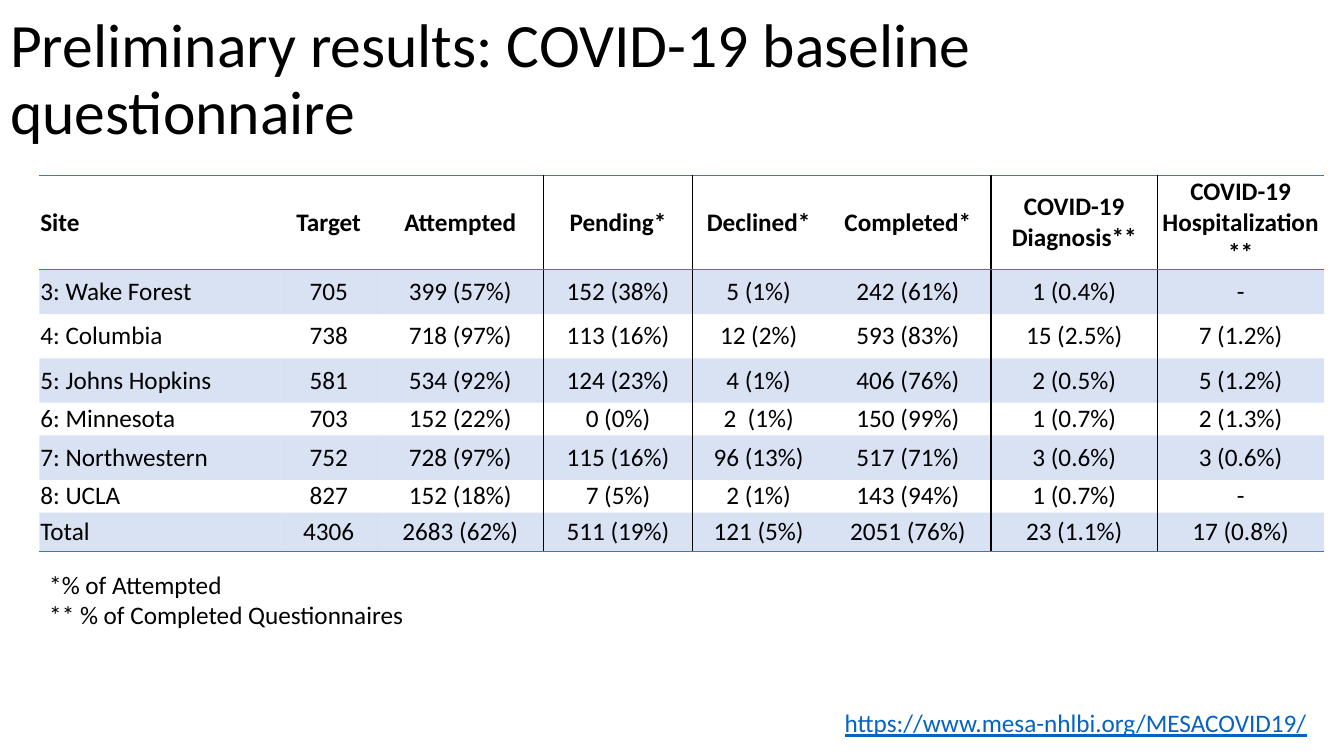
from lxml.etree import SubElement
from pptx import Presentation
from pptx.dml.color import RGBColor
from pptx.enum.text import MSO_ANCHOR, MSO_AUTO_SIZE, PP_ALIGN
from pptx.oxml.ns import qn
from pptx.util import Inches, Pt

BLACK, BLUE, LINK = "000000", "4472C4", "0563C1"
NO_STYLE = "{2D5ABB26-0587-4C30-8999-92F81FD0307C}"

COLUMN_WIDTHS = [2.39, 0.96, 1.65, 1.48, 1.31, 1.65, 1.65, 1.65]
ROW_HEIGHTS = [0.85, 0.44, 0.44, 0.44, 0.31, 0.44, 0.31, 0.39]
RULED_COLUMNS = {2, 3, 5, 6}
RESULTS = [
    ["Site", "Target", "Attempted", "Pending*", "Declined*", "Completed*",
     "COVID-19 Diagnosis**", "COVID-19 Hospitalization**"],
    ["3: Wake Forest", "705", "399 (57%)", "152 (38%)", "5 (1%)", "242 (61%)", "1 (0.4%)", "-"],
    ["4: Columbia", "738", "718 (97%)", "113 (16%)", "12 (2%)", "593 (83%)", "15 (2.5%)", "7 (1.2%)"],
    ["5: Johns Hopkins", "581", "534 (92%)", "124 (23%)", "4 (1%)", "406 (76%)", "2 (0.5%)", "5 (1.2%)"],
    ["6: Minnesota", "703", "152 (22%)", "0 (0%)", "2  (1%)", "150 (99%)", "1 (0.7%)", "2 (1.3%)"],
    ["7: Northwestern", "752", "728 (97%)", "115 (16%)", "96 (13%)", "517 (71%)", "3 (0.6%)", "3 (0.6%)"],
    ["8: UCLA", "827", "152 (18%)", "7 (5%)", "2 (1%)", "143 (94%)", "1 (0.7%)", "-"],
    ["Total", "4306", "2683 (62%)", "511 (19%)", "121 (5%)", "2051 (76%)", "23 (1.1%)", "17 (0.8%)"],
]


def add_span(para, text, size=18, color=BLACK, bold=False):
    span = para.add_run()
    span.text = text
    span.font.name = "Calibri"
    span.font.size = Pt(size)
    span.font.bold = bold
    span.font.color.rgb = RGBColor.from_string(color)
    return span


def add_border(cell, side, color):
    """Draw a 1 pt line on one side (L, R, T or B); call in that order, before filling."""
    line = SubElement(cell._tc.get_or_add_tcPr(), qn(f"a:ln{side}"), w=str(Pt(1)))
    SubElement(SubElement(line, qn("a:solidFill")), qn("a:srgbClr"), val=color)


deck = Presentation()
deck.slide_width = Inches(13.33)
deck.slide_height = Inches(7.5)
page = deck.slides.add_slide(deck.slide_layouts[5])

# Title
title = page.shapes.title
title.left, title.top = Inches(0), Inches(0.08)
title.width, title.height = Inches(13.23), Inches(1.45)
title.text_frame.vertical_anchor = MSO_ANCHOR.MIDDLE
title.text_frame.word_wrap = True
title.text_frame.auto_size = MSO_AUTO_SIZE.NONE
title_para = title.text_frame.paragraphs[0]
title_para.alignment = PP_ALIGN.LEFT
title_para.line_spacing = 0.9
add_span(title_para, "Preliminary results: COVID-19 baseline questionnaire", size=44)

# Results table
frame = page.shapes.add_table(len(RESULTS), len(COLUMN_WIDTHS),
                              Inches(0.39), Inches(1.74), Inches(12.73), Inches(3.71))
table = frame.table
table.first_row = False
table.horz_banding = False
table._tbl.tblPr.find(qn("a:tableStyleId")).text = NO_STYLE
for column, width in zip(table.columns, COLUMN_WIDTHS):
    column.width = Inches(width)

last_row = len(RESULTS) - 1
for row_index, values in enumerate(RESULTS):
    table.rows[row_index].height = Inches(ROW_HEIGHTS[row_index])
    for column_index, value in enumerate(values):
        cell = table.cell(row_index, column_index)
        cell.vertical_anchor = MSO_ANCHOR.MIDDLE
        cell.margin_left = cell.margin_right = Inches(0.01)
        cell.margin_top = cell.margin_bottom = Inches(0.01)
        para = cell.text_frame.paragraphs[0]
        para.alignment = PP_ALIGN.CENTER if column_index else PP_ALIGN.LEFT
        add_span(para, value, bold=row_index == 0)

        if column_index in RULED_COLUMNS:
            add_border(cell, "R", BLACK)
        if row_index == 0:
            add_border(cell, "T", BLUE)
        if row_index in (0, last_row):
            add_border(cell, "B", BLUE)

        if row_index % 2:
            cell.fill.solid()
            cell.fill.fore_color.rgb = RGBColor.from_string(BLUE)
            shade = cell._tc.tcPr.find(qn("a:solidFill")).find(qn("a:srgbClr"))
            SubElement(shade, qn("a:alpha"), val="20000")
        else:
            cell.fill.background()

# Web address
address_box = page.shapes.add_textbox(Inches(8.28), Inches(6.97), Inches(4.84), Inches(0.4))
address_box.text_frame.word_wrap = False
address = add_span(address_box.text_frame.paragraphs[0],
                   "https://www.mesa-nhlbi.org/MESACOVID19/", color=LINK)
address.font.underline = True

# Footnotes
notes_box = page.shapes.add_textbox(Inches(0.39), Inches(5.6), Inches(5.1), Inches(0.71))
notes_box.text_frame.word_wrap = True
add_span(notes_box.text_frame.paragraphs[0], "*% of Attempted")
add_span(notes_box.text_frame.add_paragraph(), "** % of Completed Questionnaires")

deck.save("out.pptx")
